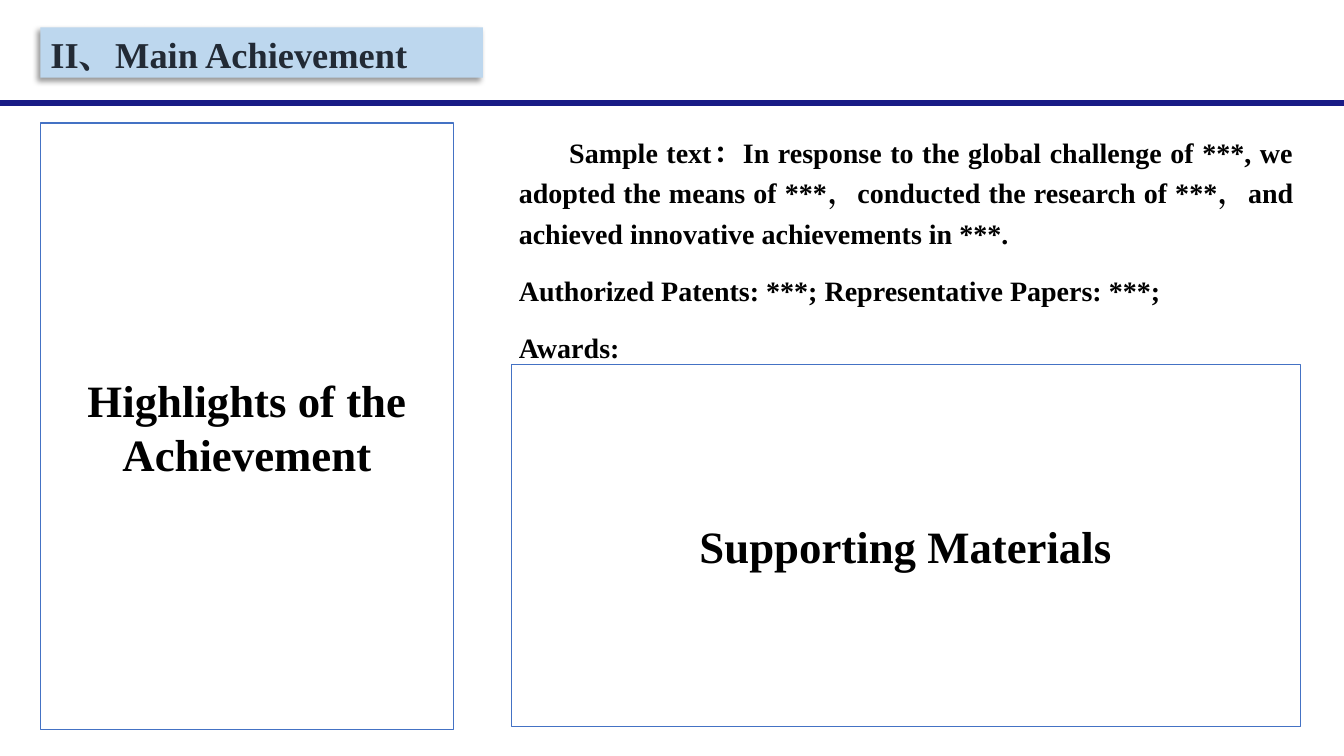
from lxml import etree
from pptx import Presentation
from pptx.dml.color import RGBColor
from pptx.enum.shapes import MSO_CONNECTOR, MSO_SHAPE
from pptx.enum.text import MSO_ANCHOR, PP_ALIGN
from pptx.oxml import parse_xml
from pptx.oxml.ns import qn
from pptx.util import Cm, Pt

RECT = MSO_SHAPE.RECTANGLE
LINE = MSO_CONNECTOR.STRAIGHT
MIDDLE = MSO_ANCHOR.MIDDLE
CENTER = PP_ALIGN.CENTER
JUST = PP_ALIGN.JUSTIFY

FONT = "Times New Roman"
HUES = {
    "bar": "BDD7EE",
    "title": "222A35",
    "text": "000000",
    "frame": "4472C4",
    "rule": "191C86",
    "shade": "000000",
}
WIDE, HIGH = 33.87, 19.05
LEFT = 1.02
NOTES = [
    ("Sample text：In response to the global challenge of ***, we adopted the means of ***，"
     "conducted the research of ***，and achieved innovative achievements in ***.", 1.27, 10),
    ("Authorized Patents: ***; Representative Papers: ***;", 0, 12),
    ("Awards:", 0, 12),
]
SHADE = (
    '<a:effectLst xmlns:a="http://schemas.openxmlformats.org/drawingml/2006/main">'
    '<a:outerShdw blurRad="50800" dist="38100" dir="8100000" algn="tr" rotWithShape="0">'
    f'<a:srgbClr val="{HUES["shade"]}"><a:alpha val="40000"/></a:srgbClr>'
    '</a:outerShdw></a:effectLst>'
)


def hue(name):
    return RGBColor.from_string(HUES[name])


def style(para, size, color):
    for run in para.runs:
        font = run.font
        font.name = FONT
        font.size = Pt(size)
        font.bold = True
        font.color.rgb = hue(color)
        east = etree.SubElement(font._element, qn("a:ea"))
        east.set("typeface", FONT)


def add_box(slide, *area):
    box = slide.shapes.add_textbox(*map(Cm, area))
    box.text_frame.word_wrap = True
    return box.text_frame


def add_title(slide, text):
    bar = slide.shapes.add_shape(RECT, Cm(LEFT), Cm(0.69), Cm(11.15), Cm(1.27))
    bar.fill.solid()
    bar.fill.fore_color.rgb = hue("bar")
    bar.line.fill.background()
    bar._element.spPr.append(parse_xml(SHADE))
    frame = add_box(slide, LEFT, 0.69, 11.15, 2.49)
    frame.text = text
    style(frame.paragraphs[0], 26, "title")


def add_rule(slide, top):
    rule = slide.shapes.add_connector(LINE, 0, Cm(top), Cm(WIDE), Cm(top))
    rule.line.color.rgb = hue("rule")
    rule.line.width = Pt(4.5)
    etree.SubElement(rule._element.spPr, qn("a:effectLst"))


def add_panel(slide, text, *area):
    panel = slide.shapes.add_shape(RECT, *map(Cm, area))
    panel.shadow.inherit = False
    panel.fill.background()
    panel.line.color.rgb = hue("frame")
    panel.line.width = Pt(0.75)
    frame = panel.text_frame
    frame.word_wrap = True
    frame.vertical_anchor = MIDDLE
    frame.text = text
    para = frame.paragraphs[0]
    para.alignment = CENTER
    style(para, 32, "text")


def add_notes(slide, notes):
    frame = add_box(slide, 12.19, 3.12, 20.65, 15.29)
    frame.text = "\n".join(text for text, _, _ in notes)
    for para, (_, dent, space) in zip(frame.paragraphs, notes):
        para.alignment = JUST
        para.line_spacing = 1.2
        para.space_before = Pt(space)
        props = para._p.get_or_add_pPr()
        props.set("marL", str(Cm(0.635)))
        props.set("indent", str(Cm(dent)))
        style(para, 20, "text")


def main():
    deck = Presentation()
    deck.slide_width, deck.slide_height = Cm(WIDE), Cm(HIGH)
    slide = deck.slides.add_slide(deck.slide_layouts[6])
    add_notes(slide, NOTES)
    add_title(slide, "II、Main Achievement")
    add_panel(slide, "Highlights of the Achievement", LEFT, 3.1, 10.41, 15.29)
    add_rule(slide, 2.6)
    add_panel(slide, "Supporting Materials", 12.88, 9.19, 19.89, 9.12)
    deck.save("out.pptx")


if __name__ == "__main__":
    main()
